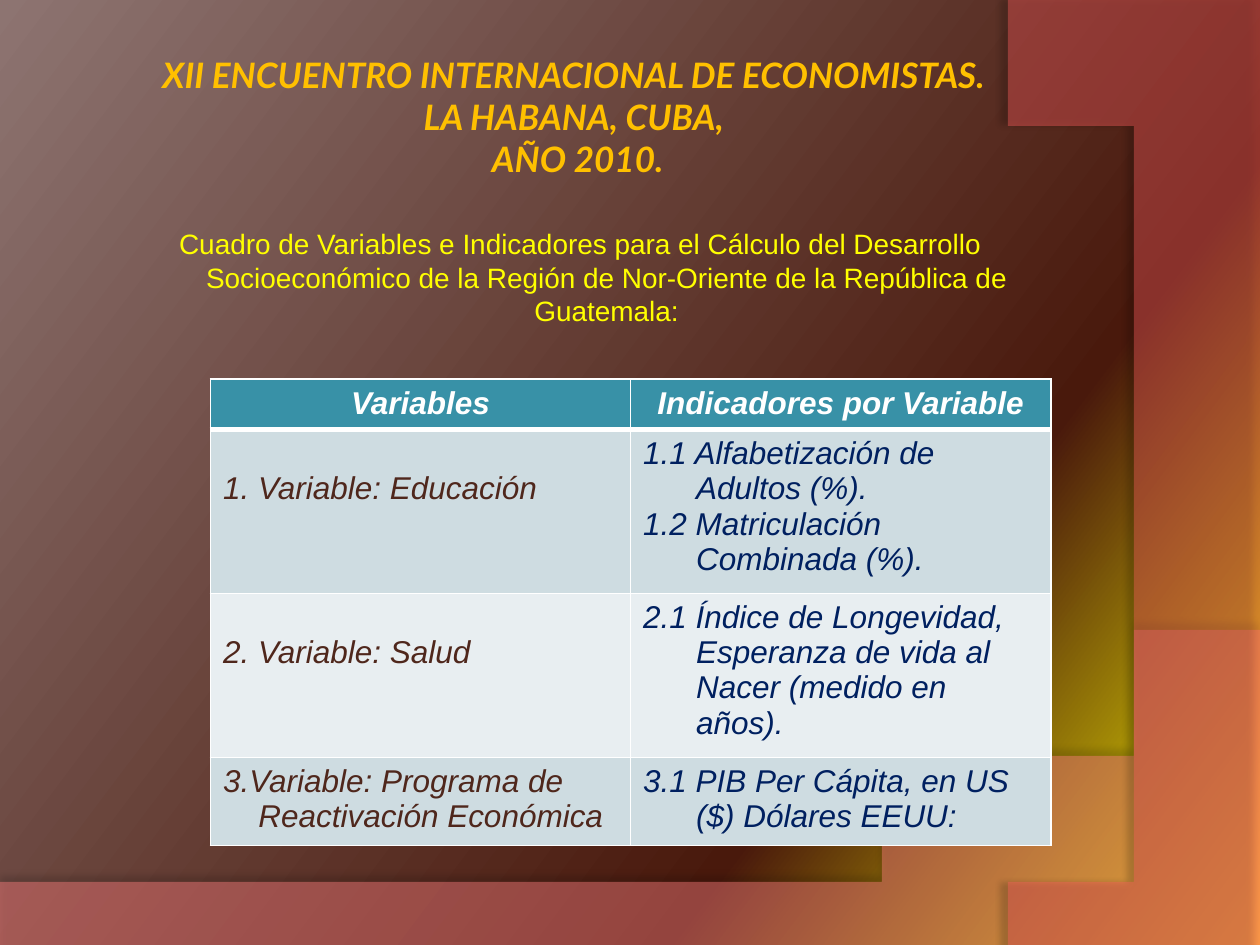
import pptx
import pptx.dml.color
import pptx.enum.text
import pptx.oxml
import pptx.oxml.ns
import pptx.util
from pptx.util import Inches

COLORS = {
    "title": "FFC000", "intro": "FFFF00", "white": "FFFFFF", "header": "3891A7",
    "band_dark": "CEDCE1", "band_light": "E8EEF1", "variable": "4F271C",
    "indicator": "002060", "bottom_wave": "FF7F7F", "right_wave": "FF5E5E",
}
BACKGROUND_STOPS = [(0, "FFFF00"), (30, "49190C"), (100, "8D7471")]
CENTER = pptx.enum.text.PP_ALIGN.CENTER
LEFT = pptx.enum.text.PP_ALIGN.LEFT

# Each line is (text, left indent in inches)
VARIABLE_INDENT, INDICATOR_INDENT = 0.28, 0.42
ROWS = [
    ([("1. Variable: Educación", 0)],
     [("1.1 Alfabetización de", 0), ("Adultos (%).", INDICATOR_INDENT),
      ("1.2 Matriculación", 0), ("Combinada (%).", INDICATOR_INDENT)]),
    ([("2. Variable: Salud", 0)],
     [("2.1 Índice de Longevidad,", 0), ("Esperanza de vida al", INDICATOR_INDENT),
      ("Nacer (medido en", INDICATOR_INDENT), ("años).", INDICATOR_INDENT)]),
    ([("3.Variable: Programa de", 0), ("Reactivación Económica", VARIABLE_INDENT)],
     [("3.1 PIB Per Cápita, en US", 0), ("($) Dólares EEUU:", INDICATOR_INDENT)]),
]
ROW_HEIGHTS = [0.39, 1.22, 1.22, 0.66]


def rgb(name):
    return pptx.dml.color.RGBColor.from_string(COLORS[name])


def make_xml(text):
    return pptx.oxml.parse_xml(text.replace(">", f" {pptx.oxml.ns.nsdecls('a')}>", 1))


def format_paragraph(paragraph, color, alignment, indent=(0, 0), **font_values):
    """Format a paragraph; indent is (left margin, first line) in inches."""
    paragraph.alignment = alignment
    properties = paragraph._p.get_or_add_pPr()
    for name, value in zip(("marL", "indent"), indent):
        properties.set(name, str(int(Inches(value))))
    for run in paragraph.runs:
        run.font.color.rgb = rgb(color)
        for name, value in font_values.items():
            setattr(run.font, name, value)


def paint_background(slide):
    fill = slide.background.fill
    fill.gradient()
    fill.gradient_angle = 143
    stops = slide._element.find(".//" + pptx.oxml.ns.qn("a:gsLst"))
    for stop in list(stops):
        stops.remove(stop)
    for position, color in BACKGROUND_STOPS:
        stops.append(make_xml(
            f'<a:gs pos="{position * 1000}"><a:srgbClr val="{color}"/></a:gs>'))


def curve(start, control_1, control_2, end, steps=60):
    """Return points along a cubic Bézier curve."""
    points = []
    for step in range(steps + 1):
        t = step / steps
        weights = ((1 - t) ** 3, 3 * t * (1 - t) ** 2, 3 * t * t * (1 - t), t ** 3)
        corners = (start, control_1, control_2, end)
        points.append(tuple(sum(w * corner[axis] for w, corner in zip(weights, corners))
                            for axis in (0, 1)))
    return points


def add_wave(slide, points, color, opacity, shadow):
    """Add a translucent outline; shadow is (opacity, blur, distance, direction)."""
    builder = slide.shapes.build_freeform(*points[0], scale=Inches(1))
    builder.add_line_segments(points[1:], close=True)
    shape = builder.convert_to_shape()
    shape.fill.solid()
    shape.fill.fore_color.rgb = rgb(color)
    shape.line.fill.background()
    properties = shape._element.spPr
    fill_color = properties.find(".//" + pptx.oxml.ns.qn("a:srgbClr"))
    fill_color.append(make_xml(f'<a:alpha val="{opacity * 1000}"></a:alpha>'))
    shadow_opacity, blur, distance, direction = shadow
    properties.append(make_xml(
        f'<a:effectLst><a:outerShdw blurRad="{pptx.util.Pt(blur)}" '
        f'dist="{pptx.util.Pt(distance)}" dir="{direction * 60000}" algn="ctr" '
        f'rotWithShape="0"><a:srgbClr val="000000">'
        f'<a:alpha val="{shadow_opacity * 1000}"/></a:srgbClr>'
        f'</a:outerShdw></a:effectLst>'))


def add_title(slide):
    title = slide.shapes.title
    slide.shapes._spTree.append(title._element)  # in front of the waves
    title.left, title.top, title.width, title.height = map(Inches, (0.5, 0.3, 8.17, 1.25))
    frame = title.text_frame
    for side in ("left", "top", "right", "bottom"):
        setattr(frame, f"margin_{side}", Inches(0.05))
    frame.vertical_anchor = pptx.enum.text.MSO_ANCHOR.MIDDLE
    frame.text = "XII ENCUENTRO INTERNACIONAL DE ECONOMISTAS. \vLA HABANA, CUBA, \vAÑO 2010."
    format_paragraph(frame.paragraphs[0], "title", CENTER, name="Lato",
                     size=pptx.util.Pt(20), bold=True, italic=True)


def add_intro(slide):
    box = slide.shapes.add_textbox(*map(Inches, (0.5, 1.75, 8.17, 1)))
    frame = box.text_frame
    frame.word_wrap = True
    frame.text = ("Cuadro de Variables e Indicadores para el Cálculo del Desarrollo "
                  "Socioeconómico de la Región de Nor-Oriente de la República de Guatemala:")
    paragraph = frame.paragraphs[0]
    paragraph.space_before = pptx.util.Pt(3.2)
    format_paragraph(paragraph, "intro", CENTER, (0.46, -0.42),
                     name="Arial", size=pptx.util.Pt(16))


def fill_cell(cell, lines, color, fill, alignment=LEFT, bold=False, bottom_width=1):
    cell.fill.solid()
    cell.fill.fore_color.rgb = rgb(fill)
    frame = cell.text_frame
    frame.text = "\n".join(text for text, _ in lines)
    for paragraph, (_, indent) in zip(frame.paragraphs, lines):
        format_paragraph(paragraph, color, alignment, (indent, 0), name="Arial",
                         size=pptx.util.Pt(18), bold=bold, italic=True)
    properties = cell._tc.get_or_add_tcPr()
    widths = {"L": 1, "R": 1, "T": 1, "B": bottom_width}
    for index, (side, width) in enumerate(widths.items()):
        properties.insert(index, make_xml(
            f'<a:ln{side} w="{pptx.util.Pt(width)}"><a:solidFill>'
            f'<a:srgbClr val="{COLORS["white"]}"/></a:solidFill></a:ln{side}>'))


def add_indicator_table(slide):
    frame = slide.shapes.add_table(len(ROWS) + 1, 2, Inches(1.67), Inches(3.01),
                                   Inches(6.67), Inches(sum(ROW_HEIGHTS)))
    table = frame.table
    for row, height in zip(table.rows, ROW_HEIGHTS):
        row.height = Inches(height)
    for column, heading in enumerate(("Variables", "Indicadores por Variable")):
        fill_cell(table.cell(0, column), [(heading, 0)], "white", "header",
                  CENTER, bold=True, bottom_width=3)
    for number, row_lines in enumerate(ROWS, start=1):
        fill = "band_dark" if number % 2 else "band_light"
        for column, color in enumerate(("variable", "indicator")):
            fill_cell(table.cell(number, column), row_lines[column], color, fill)
        if len(row_lines[0]) == 1:
            table.cell(number, 0).margin_top = Inches(0.33)  # starts one line lower


def main():
    presentation = pptx.Presentation()
    presentation.slide_width, presentation.slide_height = Inches(10), Inches(7.5)
    slide = presentation.slides.add_slide(presentation.slide_layouts[5])
    paint_background(slide)
    bottom_edge = curve((10, 5.2), (5.59, 7.29), (3.91, 7.19), (0, 7.05))
    add_wave(slide, [(0, 7.51), (10, 7.51)] + bottom_edge,
             "bottom_wave", 45, (35, 4, 3.5, 270))
    right_edge = curve((8.21, 7.5), (9.35, 6.19), (10.18, 3), (8, 0))
    add_wave(slide, [(10, 0.02), (10, 7.5)] + right_edge,
             "right_wave", 40, (45, 4, 4, 180))
    add_title(slide)
    add_intro(slide)
    add_indicator_table(slide)
    presentation.save("out.pptx")


if __name__ == "__main__":
    main()
